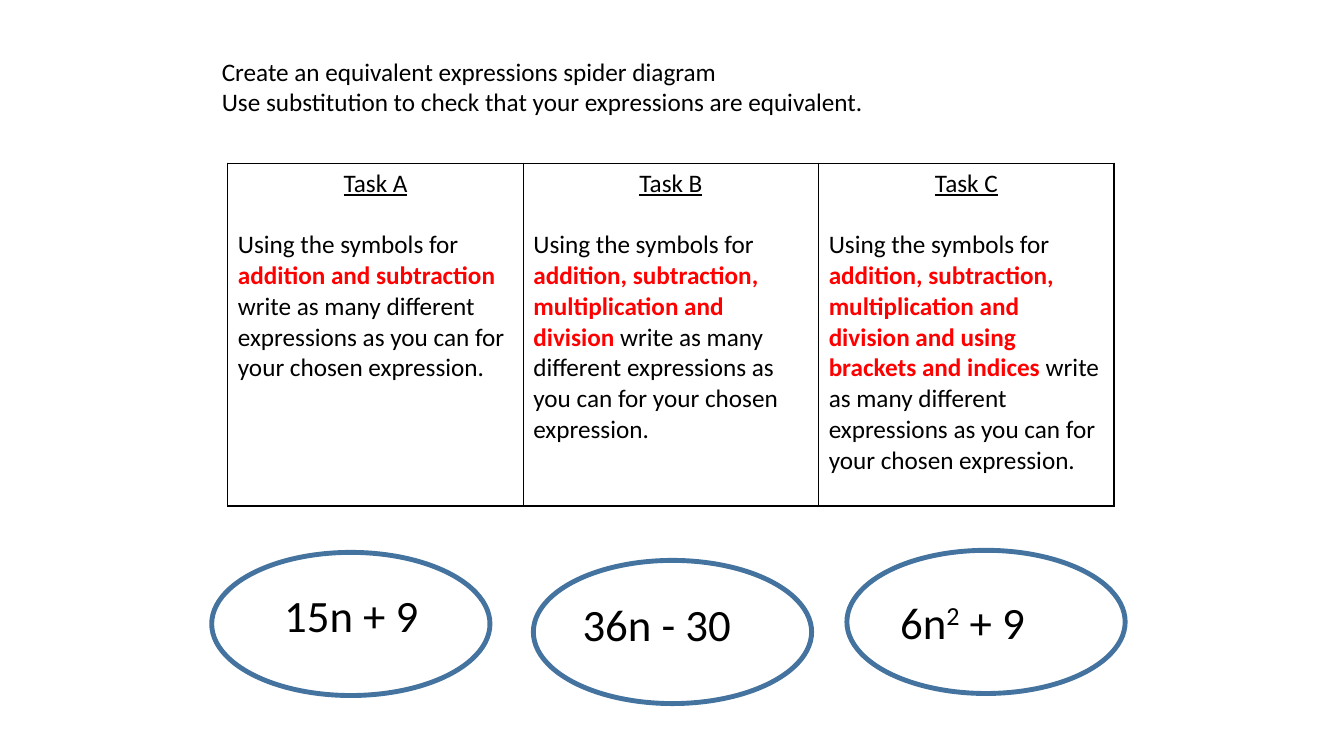
import pptx
import pptx.dml.color
import pptx.enum.shapes
import pptx.enum.text
import pptx.oxml
import pptx.oxml.ns
import pptx.util

Inches = pptx.util.Inches
Pt = pptx.util.Pt
ALIGN = pptx.enum.text.PP_ALIGN


def rgb(color):
    return pptx.dml.color.RGBColor.from_string(color)


def style(font, size, color="000000"):
    font.name = "Calibri"
    font.size = Pt(size)
    font.color.rgb = rgb(color)


prs = pptx.Presentation()
prs.slide_width = Inches(13.33)
prs.slide_height = Inches(7.5)
s = prs.slides.add_slide(prs.slide_layouts[5])

# Instructions
title = s.shapes.title
title.left, title.top = Inches(2.1), Inches(0.51)
title.width, title.height = Inches(9.13), Inches(0.71)
tf = title.text_frame
tf.vertical_anchor = pptx.enum.text.MSO_ANCHOR.TOP
tf.text = (
    "Create an equivalent expressions spider diagram\n"
    "Use substitution to check that your expressions are equivalent."
)
for p in tf.paragraphs:
    p.alignment = ALIGN.LEFT
    style(p.font, 18)

# Task table
tasks = [
    ("Task A", "addition and subtraction "),
    ("Task B", "addition, subtraction, multiplication and division "),
    ("Task C", "addition, subtraction, multiplication and division "
               "and using brackets and indices "),
]
frame = s.shapes.add_table(1, len(tasks), Inches(2.26), Inches(1.62),
                           Inches(8.79), Inches(3.4))
table = frame.table
table.first_row = False
table.horz_banding = False
for cell, (heading, operations) in zip(table.iter_cells(), tasks):
    tf = cell.text_frame
    p = tf.paragraphs[0]
    p.text = heading
    p.alignment = ALIGN.CENTER
    p.space_after = Pt(22)
    style(p.font, 18)
    p.font.underline = True

    p = tf.add_paragraph()
    for text, color, bold in [
        ("Using the symbols for ", "000000", False),
        (operations, "FF0000", True),
        ("write as many different expressions as you can for your chosen "
         "expression.", "000000", False),
    ]:
        r = p.add_run()
        r.text = text
        style(r.font, 18, color)
        r.font.bold = bold

    tcPr = cell._tc.get_or_add_tcPr()
    for side in ("lnL", "lnR", "lnT", "lnB"):
        tcPr.append(pptx.oxml.parse_xml(
            f'<a:{side} {pptx.oxml.ns.nsdecls("a")} w="12700"><a:solidFill>'
            f'<a:srgbClr val="000000"/></a:solidFill></a:{side}>'
        ))
    cell.fill.background()

# Expressions: ellipse left and top, text left, top and width, (text, raised) runs
expressions = [
    (2.1, 5.48, 2.72, 5.78, 1.65, [("15n + 9", False)]),
    (5.29, 5.56, 5.68, 5.87, 2.14, [("36n - 30", False)]),
    (8.4, 5.46, 8.83, 5.85, 1.9, [("6n", False), ("2", True), (" + 9", False)]),
]
for left, top, text_left, text_top, text_width, runs in expressions:
    group = s.shapes.add_group_shape()
    sp = group.shapes.add_shape(pptx.enum.shapes.MSO_SHAPE.OVAL, Inches(left),
                                Inches(top), Inches(2.76), Inches(1.42))
    sp.shadow.inherit = False
    sp.fill.background()
    sp.line.color.rgb = rgb("43739E")
    sp.line.width = Pt(3.5)

    box = group.shapes.add_textbox(Inches(text_left), Inches(text_top),
                                   Inches(text_width), Inches(0.64))
    tf = box.text_frame
    tf.word_wrap = True
    p = tf.paragraphs[0]
    style(p.font, 32)
    for text, raised in runs:
        r = p.add_run()
        r.text = text
        if raised:
            r._r.get_or_add_rPr().set("baseline", "30000")

prs.save("out.pptx")
